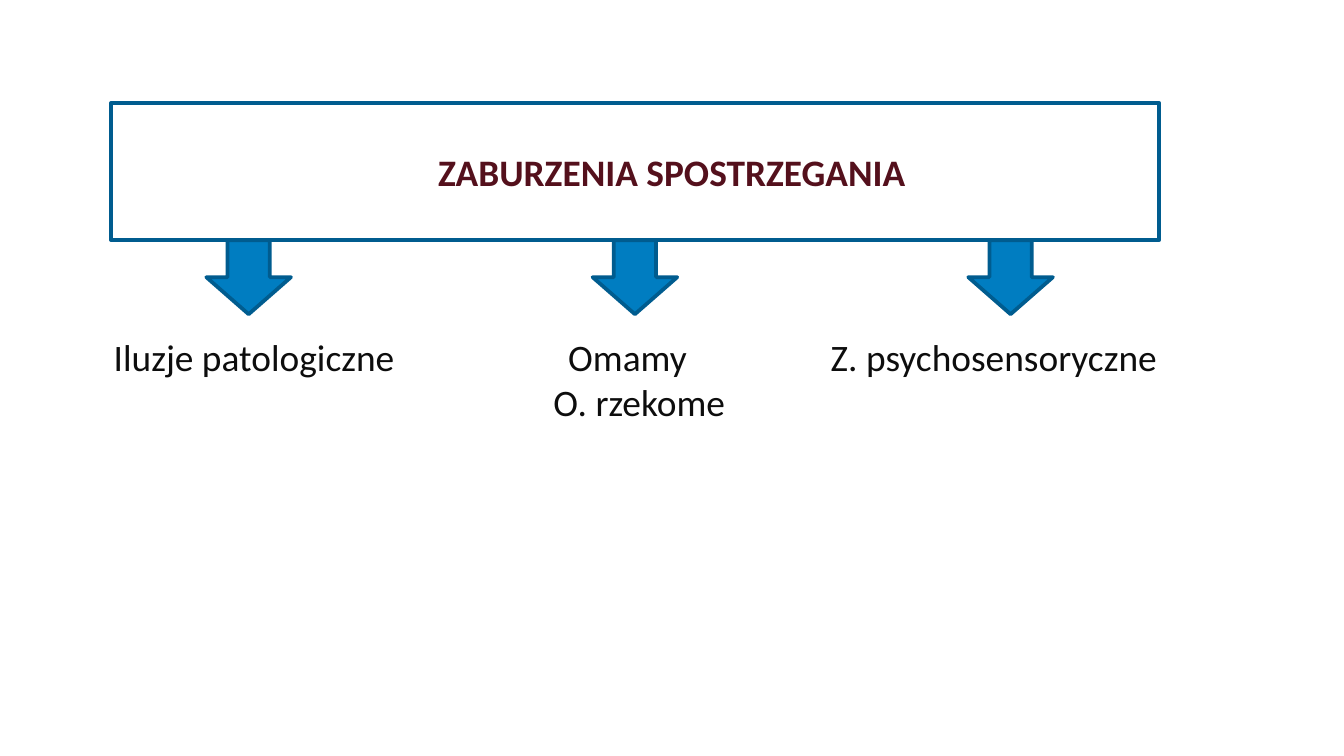
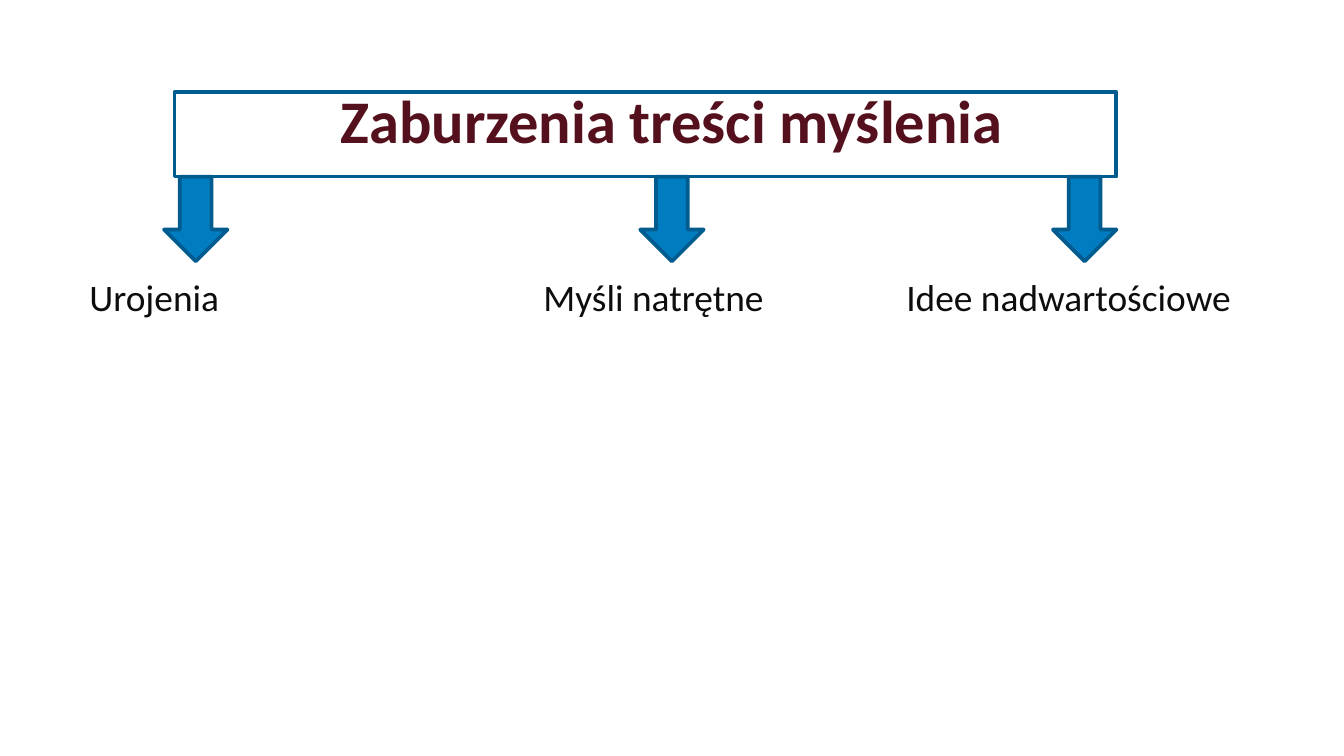
from pptx import Presentation
from pptx.dml.color import RGBColor
from pptx.enum.shapes import MSO_SHAPE as Shape
from pptx.enum.text import MSO_ANCHOR as Anchor, PP_ALIGN as Align
from pptx.util import Cm, Pt

FONT = "Calibri"
WINE, INK, BLUE, NAVY = "54101C", "0D0D0D", "007DC1", "005C8F"
PITCH = 0.85


def color(code):
    return RGBColor.from_string(code)


def add_text(slide, text, box, size, code, bold=False):
    frame = slide.shapes.add_textbox(*map(Cm, box)).text_frame
    frame.word_wrap = True
    frame.margin_left = frame.margin_right = 0
    frame.margin_top = frame.margin_bottom = 0
    frame.text = text
    for run in frame.paragraphs[0].runs:
        font = run.font
        font.name, font.size, font.bold = FONT, Pt(size), bold
        font.color.rgb = color(code)
    return frame


def add_title(slide, text, top, size):
    frame = add_text(slide, text, (1.27, top, 22.86, 1.4), size, WINE, True)
    frame.vertical_anchor = Anchor.MIDDLE
    frame.paragraphs[0].alignment = Align.CENTER


def add_labels(slide, rows, top):
    """Place rows of (left, label) pairs, one line below the other."""
    for line, row in enumerate(rows):
        for left, label in row:
            box = (left, top + line * PITCH, 7, PITCH)
            add_text(slide, label, box, 20, INK)


def add_block(slide, kind, box, fill=None):
    block = slide.shapes.add_shape(kind, *map(Cm, box))
    block.shadow.inherit = False
    if fill:
        block.fill.solid()
        block.fill.fore_color.rgb = color(fill)
    else:
        block.fill.background()
    block.line.color.rgb = color(NAVY)
    block.line.width = Pt(2)


def add_tree(slide, frame, size, lefts):
    """Draw the title frame with arrows hanging from its lower edge."""
    add_block(slide, Shape.RECTANGLE, frame)
    base = frame[1] + frame[3]
    for left in lefts:
        add_block(slide, Shape.DOWN_ARROW, (left, base, *size), BLUE)


def main():
    deck = Presentation()
    deck.slide_width, deck.slide_height = Cm(25.4), Cm(14.29)
    blank = deck.slide_layouts[6]

    slide = deck.slides.add_slide(blank)
    add_title(slide, "ZABURZENIA SPOSTRZEGANIA", 2.54, 20)
    rows = [
        [(2.15, "Iluzje patologiczne"), (10.74, "Omamy"),
         (15.7, "Z. psychosensoryczne")],
        [(10.46, "O. rzekome")],
    ]
    add_labels(slide, rows, 6.31)
    add_tree(slide, (2.1, 1.95, 19.81, 2.59), (1.6, 1.4), (3.9, 11.2, 18.3))

    slide = deck.slides.add_slide(blank)
    add_title(slide, "Zaburzenia treści myślenia", 1.55, 32.4)
    rows = [[(1.69, "Urojenia"), (10.27, "Myśli natrętne"),
             (17.13, "Idee nadwartościowe")]]
    add_labels(slide, rows, 5.19)
    add_tree(slide, (3.3, 1.74, 17.8, 1.6), (1.2, 1.6), (3.1, 12.1, 19.9))

    deck.save("out.pptx")


if __name__ == "__main__":
    main()
